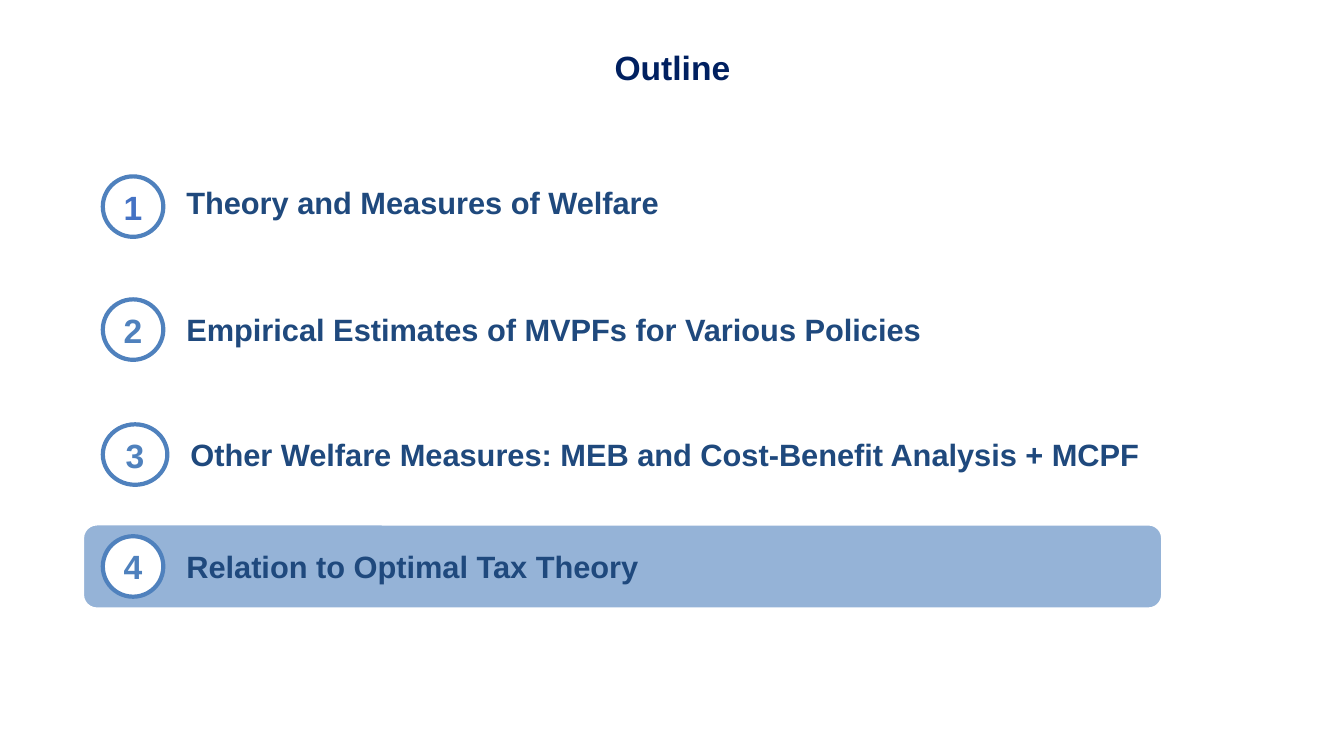
from dataclasses import dataclass

from pptx import Presentation
from pptx.dml.color import RGBColor
from pptx.enum.shapes import MSO_SHAPE
from pptx.enum.text import MSO_ANCHOR, PP_ALIGN
from pptx.util import Inches, Pt


@dataclass(frozen=True)
class Theme:
    """Colours, font and type sizes of the slide."""
    font: str = "Arial"
    title: str = "002060"
    topic: str = "1F497D"
    ring: str = "4F81BD"
    first_number: str = "4472C4"
    highlight: str = "95B3D7"
    white: str = "FFFFFF"
    large: int = 24
    medium: int = 22


@dataclass(frozen=True)
class Box:
    """A rectangle in inches."""
    left: float
    top: float
    width: float
    height: float

    def lengths(self):
        """Return the rectangle as slide lengths."""
        return [Inches(side) for side in (self.left, self.top, self.width, self.height)]


THEME = Theme()
BADGE_SIZE = 0.6
TOPIC_GAP = 0.13
TOPICS = [
    ("Theory and Measures of Welfare", Box(1.02, 1.12, 8.61, 1.77), 2.05, 0.6, THEME.first_number),
    ("Empirical Estimates of MVPFs for Various Policies", Box(1.02, 3.03, 9.92, 0.47), 3.27, 0.6, THEME.ring),
    ("Other Welfare Measures: MEB and Cost-Benefit Analysis + MCPF", Box(1.02, 4.09, 10.51, 0.84), 4.51, 0.64, THEME.ring),
    ("Relation to Optimal Tax Theory", Box(1.02, 5.38, 9.92, 0.47), 5.62, 0.6, THEME.ring),
]


def write(shape, text, size, color, align):
    """Write one bold, vertically centred line into a shape."""
    frame = shape.text_frame
    frame.word_wrap = True
    frame.vertical_anchor = MSO_ANCHOR.MIDDLE
    para = frame.paragraphs[0]
    para.text = text
    para.alignment = align
    para.font.name = THEME.font
    para.font.size = Pt(size)
    para.font.bold = True
    para.font.color.rgb = RGBColor.from_string(color)


def add_outlined(page, kind, box, fill, line, weight):
    """Add a filled preset shape with an outline and no shadow."""
    shape = page.shapes.add_shape(kind, *box.lengths())
    shape.shadow.inherit = False
    shape.fill.solid()
    shape.fill.fore_color.rgb = RGBColor.from_string(fill)
    shape.line.color.rgb = RGBColor.from_string(line)
    shape.line.width = Pt(weight)
    return shape


def add_title(page, box, text):
    """Add the centred slide title."""
    title = page.shapes.add_textbox(*box.lengths())
    write(title, text, THEME.large, THEME.title, PP_ALIGN.CENTER)


def add_highlight(page, box):
    """Add the band behind the current topic."""
    add_outlined(page, MSO_SHAPE.ROUNDED_RECTANGLE, box, THEME.highlight, THEME.white, 2)


def add_topic(page, box, number, text, badge_middle, badge_width, number_color):
    """Add a numbered badge and its topic to the right."""
    badge_box = Box(box.left, badge_middle - BADGE_SIZE / 2, badge_width, BADGE_SIZE)
    badge = add_outlined(page, MSO_SHAPE.OVAL, badge_box, THEME.white, THEME.ring, 3)
    write(badge, str(number), THEME.large, number_color, PP_ALIGN.CENTER)
    indent = badge_width + TOPIC_GAP
    topic_box = Box(box.left + indent, box.top, box.width - indent, box.height)
    topic = page.shapes.add_textbox(*topic_box.lengths())
    write(topic, text, THEME.medium, THEME.topic, PP_ALIGN.LEFT)


def add_outline_slide(deck):
    """Add the outline slide with its last topic highlighted."""
    page = deck.slides.add_slide(deck.slide_layouts[6])
    add_highlight(page, Box(0.82, 5.2, 10.71, 0.84))
    add_title(page, Box(1.67, 0.1, 10, 1.12), "Outline")
    for number, (text, box, middle, width, color) in enumerate(TOPICS, start=1):
        add_topic(page, box, number, text, middle, width, color)


def main():
    """Build and save the deck."""
    deck = Presentation()
    deck.slide_width = Inches(13.33)
    deck.slide_height = Inches(7.5)
    add_outline_slide(deck)
    deck.save("out.pptx")


if __name__ == "__main__":
    main()
